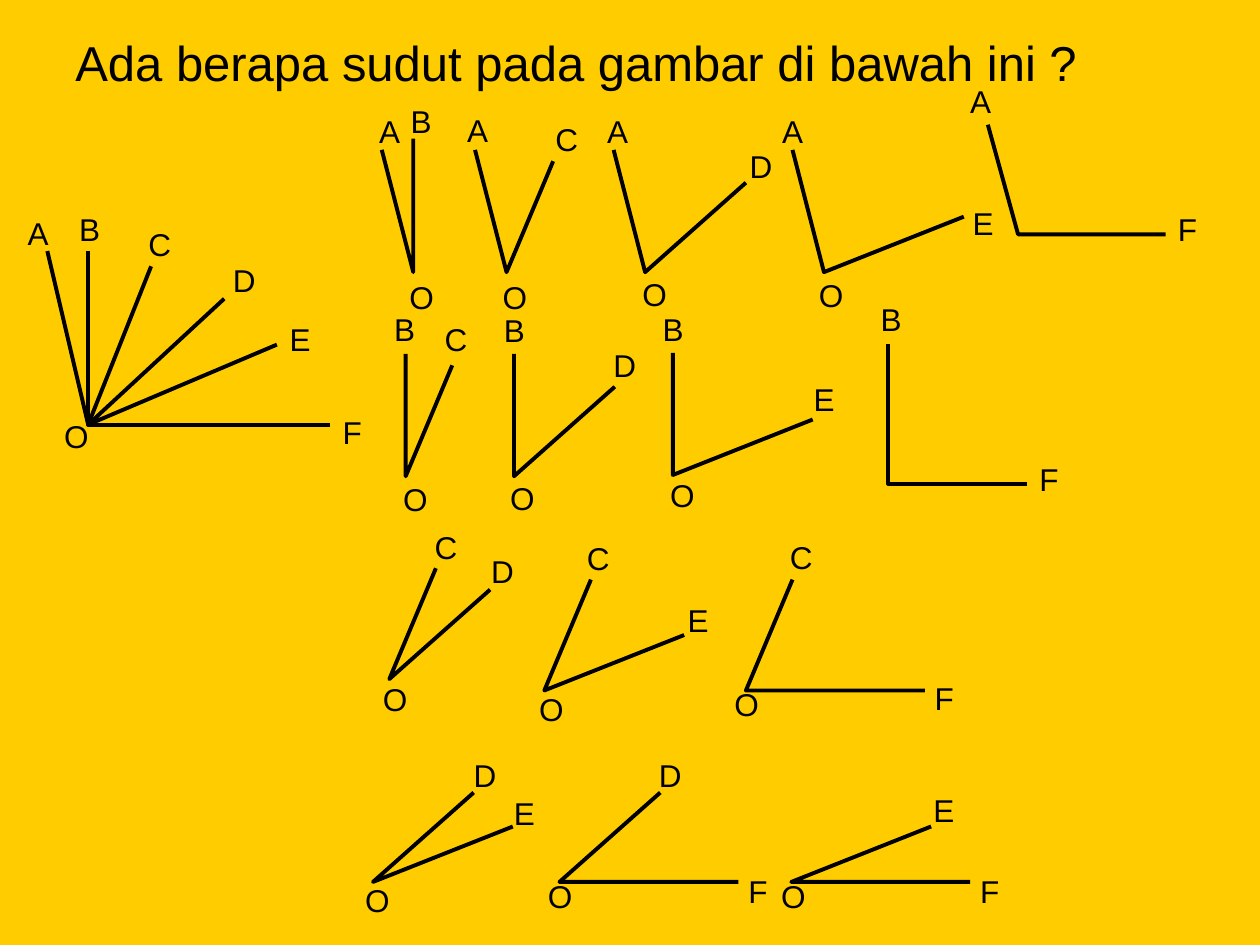
from dataclasses import dataclass, field

from pptx import Presentation
from pptx import util as u
from pptx.dml import color
from pptx.enum import text

Point = tuple[float, float]


@dataclass(frozen=True)
class Theme:
    background: color.RGBColor = color.RGBColor(0xFF, 0xCC, 0x00)
    ink: color.RGBColor = color.RGBColor(0, 0, 0)
    font: str = "Arial"
    title_size: u.Length = u.Pt(28)
    label_size: u.Length = u.Pt(18)
    line_width: u.Length = u.Pt(2.25)


@dataclass(frozen=True)
class Figure:
    vertex: Point
    labels: dict[str, Point]
    angles: tuple[str, ...]
    label_size: Point = (0.31, 0.35)
    scale: float = 1.0
    own_rays: dict[str, Point] = field(default_factory=dict)


THEME = Theme()

RAYS: dict[str, Point] = {
    "A": (-0.25, -0.97),
    "B": (0, -0.97),
    "C": (0.37, -0.88),
    "D": (0.8, -0.71),
    "E": (1.11, -0.44),
    "F": (1.42, 0),
}

FIGURES = [
    Figure((0.7, 3.37),
           {"A": (0.12, 1.65), "B": (0.53, 1.62), "C": (1.08, 1.74), "D": (1.75, 2.02),
            "E": (2.2, 2.49), "F": (2.62, 3.23), "O": (0.41, 3.26)},
           ("BF", "AC", "ED"), (0.42, 0.5), 1.35,
           {"A": (-0.24, -1.02), "B": (0, -1.02), "C": (0.37, -0.93), "D": (0.8, -0.74),
            "E": (1.11, -0.47)}),
    Figure((3.28, 2.16), {"A": (2.91, 0.84), "B": (3.16, 0.76), "O": (3.15, 2.16)},
           ("AB",), own_rays={"B": (0, -1.06)}),
    Figure((4.02, 2.16), {"A": (3.61, 0.83), "C": (4.31, 0.9), "O": (3.89, 2.16)}, ("AC",)),
    Figure((5.12, 2.16), {"A": (4.72, 0.84), "D": (5.85, 1.12), "O": (5, 2.13)}, ("AD",)),
    Figure((6.54, 2.16), {"A": (6.11, 0.84), "E": (7.62, 1.57), "O": (6.4, 2.14)}, ("AE",)),
    Figure((8.08, 1.86), {"A": (7.6, 0.6), "F": (9.25, 1.62)}, ("AF",), (0.55, 0.4),
           own_rays={"A": (-0.24, -0.87), "F": (1.17, 0)}),
    Figure((3.22, 3.78), {"B": (3.03, 2.41), "C": (3.43, 2.49), "O": (3.1, 3.76)}, ("BC",)),
    Figure((4.08, 3.78), {"B": (3.9, 2.42), "D": (4.77, 2.7), "O": (3.95, 3.75)}, ("BD",)),
    Figure((5.34, 3.77), {"B": (5.16, 2.41), "E": (6.36, 2.97), "O": (5.22, 3.73)}, ("BE",)),
    Figure((7.05, 3.84), {"B": (6.89, 2.33), "F": (8.15, 3.6)}, ("BF",), (0.39, 0.4),
           own_rays={"B": (0, -1.11), "F": (1.1, 0)}),
    Figure((3.09, 5.39), {"C": (3.35, 4.14), "D": (3.8, 4.33), "O": (2.94, 5.35)}, ("CD",)),
    Figure((4.32, 5.48), {"C": (4.56, 4.23), "E": (5.36, 4.72), "O": (4.18, 5.43)}, ("CE",)),
    Figure((5.92, 5.48), {"C": (6.17, 4.22), "F": (7.32, 5.34), "O": (5.73, 5.39)}, ("CF",)),
    Figure((2.96, 7), {"D": (3.66, 5.95), "E": (3.98, 6.25), "O": (2.8, 6.94)}, ("DE",)),
    Figure((4.44, 7), {"D": (5.13, 5.95), "F": (5.84, 6.87), "O": (4.25, 6.91)}, ("DF",)),
    Figure((6.28, 7), {"E": (7.31, 6.23), "F": (7.68, 6.87), "O": (6.1, 6.91)}, ("EF",)),
]


def draw_text(shapes, words: str, corner: Point, size: Point, type_size: u.Length,
              anchor=text.MSO_ANCHOR.TOP) -> None:
    box = shapes.add_textbox(*map(u.Inches, (*corner, *size)))
    frame = box.text_frame
    frame.word_wrap = True
    frame.vertical_anchor = anchor
    para = frame.paragraphs[0]
    span = para.add_run()
    span.text = words
    span.font.name = THEME.font
    span.font.size = type_size
    span.font.color.rgb = THEME.ink


def ray_end(figure: Figure, letter: str) -> Point:
    across, down = figure.own_rays.get(letter, RAYS[letter])
    return (figure.vertex[0] + across * figure.scale,
            figure.vertex[1] + down * figure.scale)


def draw_angle(shapes, start: Point, vertex: Point, end: Point) -> None:
    first, *rest = [(u.Inches(x), u.Inches(y)) for x, y in (start, vertex, end)]
    builder = shapes.build_freeform(*first)
    builder.add_line_segments(rest, close=False)
    angle = builder.convert_to_shape()
    angle.shadow.inherit = False
    angle.fill.background()
    angle.line.color.rgb = THEME.ink
    angle.line.width = THEME.line_width


def draw_figure(page, figure: Figure) -> None:
    shapes = page.shapes.add_group_shape().shapes
    for start, end in figure.angles:
        draw_angle(shapes, ray_end(figure, start), figure.vertex, ray_end(figure, end))
    for letter, corner in figure.labels.items():
        draw_text(shapes, letter, corner, figure.label_size, THEME.label_size)


def main() -> None:
    deck = Presentation()
    deck.slide_width, deck.slide_height = u.Inches(10), u.Inches(7.5)
    page = deck.slides.add_slide(deck.slide_layouts[6])
    page.background.fill.solid()
    page.background.fill.fore_color.rgb = THEME.background
    for figure in FIGURES:
        draw_figure(page, figure)
    draw_text(page.shapes, "Ada berapa sudut pada gambar di bawah ini ?", (0.5, 0.3), (9, 0.38),
              THEME.title_size, text.MSO_ANCHOR.MIDDLE)
    deck.save("out.pptx")


if __name__ == "__main__":
    main()
